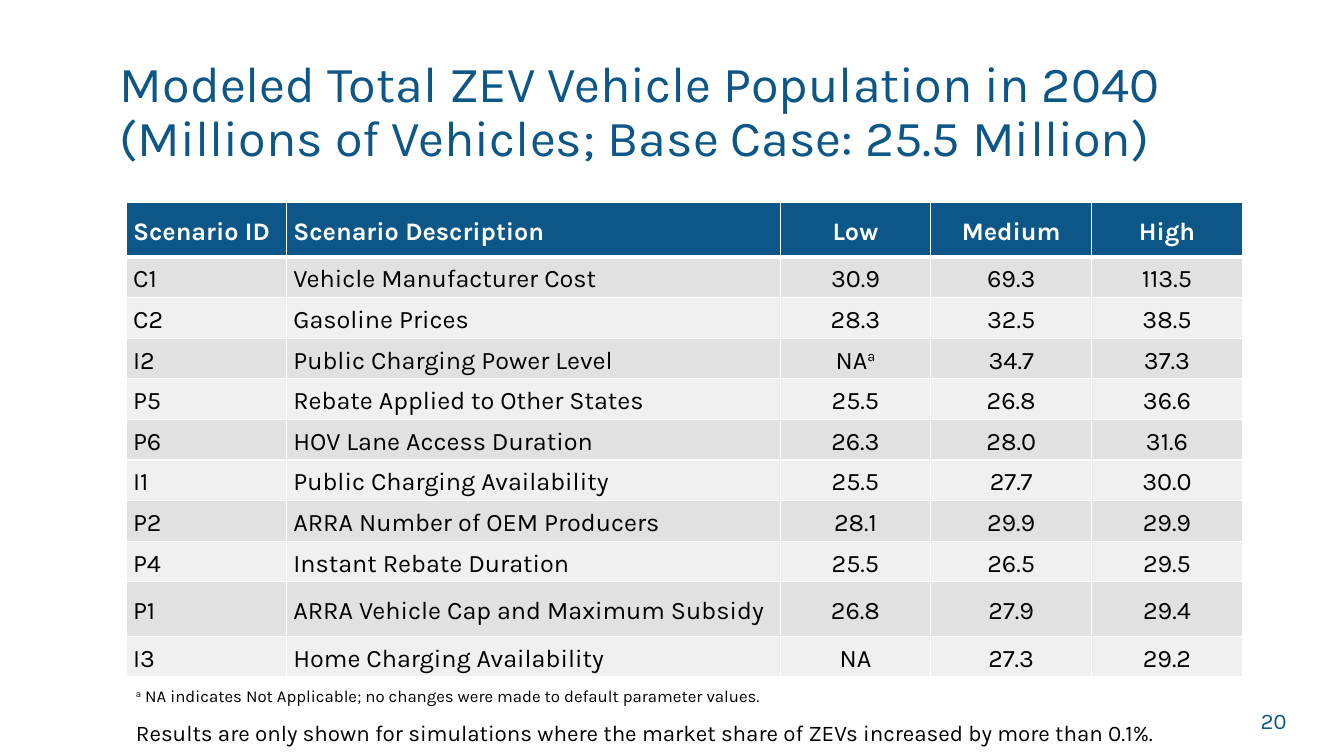
from dataclasses import dataclass

from lxml.etree import SubElement
from pptx import Presentation
from pptx.dml.color import RGBColor
from pptx.enum.text import MSO_ANCHOR as Anchor, MSO_AUTO_SIZE as AutoSize, PP_ALIGN as Align
from pptx.oxml.ns import qn
from pptx.util import Inches, Pt


@dataclass(frozen=True)
class Theme:
    font: str = "Karla"
    blue: str = "0C5788"
    white: str = "FFFFFF"
    black: str = "000000"
    bands: tuple = ("E1E1E1", "F0F0F0")
    title: int = 36
    table: int = 18
    note: int = 16
    footnote: int = 12


theme = Theme()


def write(paragraph, pieces, size, color, align=Align.LEFT, bold=False):
    """Fill a paragraph with (text, is_superscript) pieces."""
    for text, raised in pieces:
        run = paragraph.add_run()
        run.text = text
        if raised:
            run._r.get_or_add_rPr().set("baseline", "30000")
    paragraph.alignment = align
    font = paragraph.font
    font.name, font.size, font.bold = theme.font, Pt(size), bold
    font.color.rgb = RGBColor.from_string(color)


def add_borders(cell, bottom_width):
    """Draw white cell edges; must run before the cell gets its fill."""
    properties = cell._tc.get_or_add_tcPr()
    for edge, width in (("lnL", 1), ("lnR", 1), ("lnT", 1), ("lnB", bottom_width)):
        line = SubElement(properties, qn(f"a:{edge}"), w=str(Pt(width)))
        fill = SubElement(line, qn("a:solidFill"))
        SubElement(fill, qn("a:srgbClr"), val=theme.white)


prs = Presentation()
prs.slide_width, prs.slide_height = Inches(13.33), Inches(7.5)
slide = prs.slides.add_slide(prs.slide_layouts[5])

# Title
title = slide.shapes.title
title.left, title.top = Inches(1.09), Inches(0.4)
title.width, title.height = Inches(11.22), Inches(1.45)
title.text_frame.auto_size = AutoSize.NONE
title.text_frame.vertical_anchor = Anchor.MIDDLE
heading = title.text_frame.paragraphs[0]
heading.line_spacing = 0.9
write(heading, [("Modeled Total ZEV Vehicle Population in 2040 "
                 "(Millions of Vehicles; Base Case: 25.5 Million)", False)],
      theme.title, theme.blue)

# Slide number
number_box = slide.shapes.add_textbox(Inches(9.42), Inches(6.95), Inches(3.44), Inches(0.4))
number_box.text_frame.word_wrap = True
number_box.text_frame.vertical_anchor = Anchor.MIDDLE
write(number_box.text_frame.paragraphs[0], [("20", False)], theme.note, theme.blue, Align.RIGHT)

# Scenario table
scenarios = [
    ("Scenario ID", "Scenario Description", "Low", "Medium", "High"),
    ("C1", "Vehicle Manufacturer Cost", "30.9", "69.3", "113.5"),
    ("C2", "Gasoline Prices", "28.3", "32.5", "38.5"),
    ("I2", "Public Charging Power Level", "NA", "34.7", "37.3"),
    ("P5", "Rebate Applied to Other States", "25.5", "26.8", "36.6"),
    ("P6", "HOV Lane Access Duration", "26.3", "28.0", "31.6"),
    ("I1", "Public Charging Availability", "25.5", "27.7", "30.0"),
    ("P2", "ARRA Number of OEM Producers", "28.1", "29.9", "29.9"),
    ("P4", "Instant Rebate Duration", "25.5", "26.5", "29.5"),
    ("P1", "ARRA Vehicle Cap and Maximum Subsidy", "26.8", "27.9", "29.4"),
    ("I3", "Home Charging Availability", "NA", "27.3", "29.2"),
]
column_widths = (1.59, 4.9, 1.49, 1.6, 1.49)
tall_rows = ("Scenario ID", "P1")
footnoted = ("I2", 2)  # scenario and column that carry the superscript

table = slide.shapes.add_table(len(scenarios), len(column_widths), Inches(1.25), Inches(2.01),
                               Inches(11.06), Inches(4.72)).table
for column, width in zip(table.columns, column_widths):
    column.width = Inches(width)

for r, scenario in enumerate(scenarios):
    is_header = r == 0
    table.rows[r].height = Inches(0.54 if scenario[0] in tall_rows else 0.403)
    fill_color = theme.blue if is_header else theme.bands[(r - 1) % 2]
    for c, value in enumerate(scenario):
        cell = table.cell(r, c)
        add_borders(cell, 3 if is_header else 1)
        cell.fill.solid()
        cell.fill.fore_color.rgb = RGBColor.from_string(fill_color)
        cell.vertical_anchor = Anchor.MIDDLE
        cell.margin_left = cell.margin_right = Inches(0.07)
        cell.margin_top = cell.margin_bottom = 0
        entry = cell.text_frame.paragraphs[0]
        entry.line_spacing = 1.15
        entry.space_before = entry.space_after = Pt(6)
        pieces = [(value, False)]
        if (scenario[0], c) == footnoted:
            pieces.append(("a", True))
        write(entry, pieces, theme.table, theme.white if is_header else theme.black,
              Align.CENTER if c >= 2 else Align.LEFT, is_header)

# Notes below the table
notes = [
    (6.72, 0.31, theme.footnote,
     [("a", True),
      (" NA indicates Not Applicable; no changes were made to default parameter values.", False)]),
    (7.05, 0.38, theme.note,
     [("Results are only shown for simulations where the market share of ZEVs "
       "increased by more than 0.1%.", False)]),
]
for top, height, size, pieces in notes:
    note_box = slide.shapes.add_textbox(Inches(1.25), Inches(top), Inches(11.06), Inches(height))
    note_box.text_frame.word_wrap = True
    note_box.text_frame.auto_size = AutoSize.SHAPE_TO_FIT_TEXT
    note = note_box.text_frame.paragraphs[0]
    note.line_spacing = 1.15
    note.space_before = Pt(6)
    write(note, pieces, size, theme.black)

prs.save("out.pptx")
